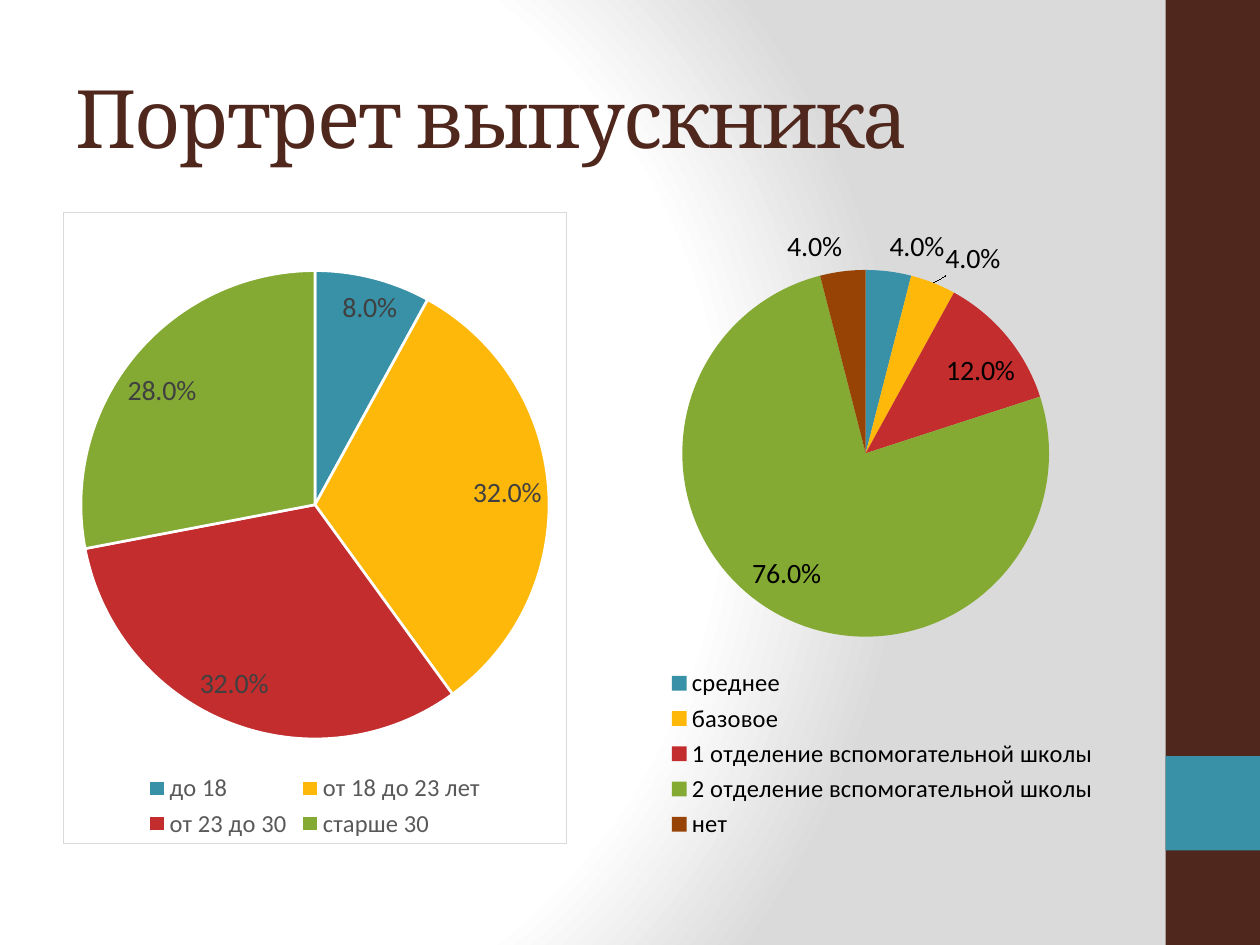
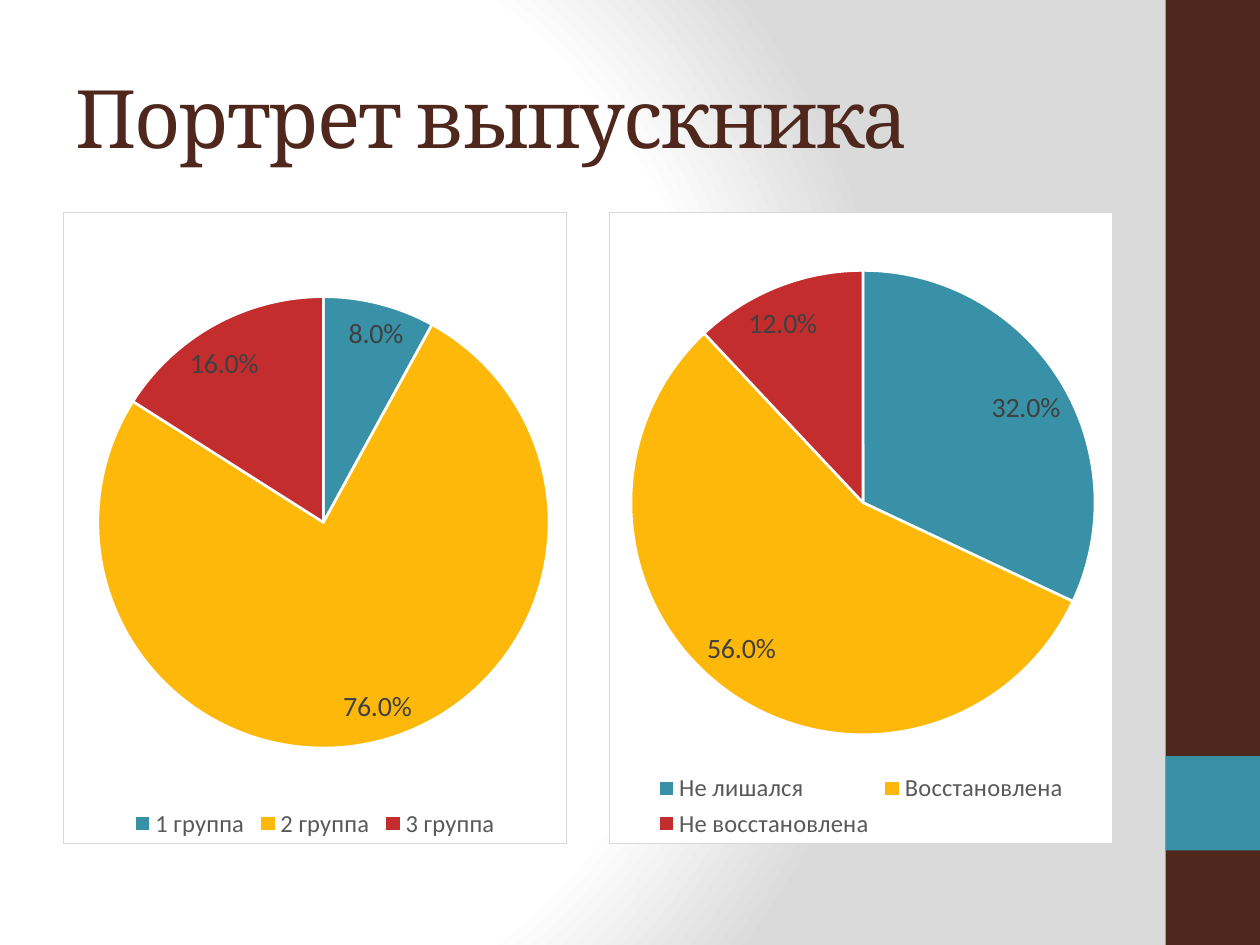
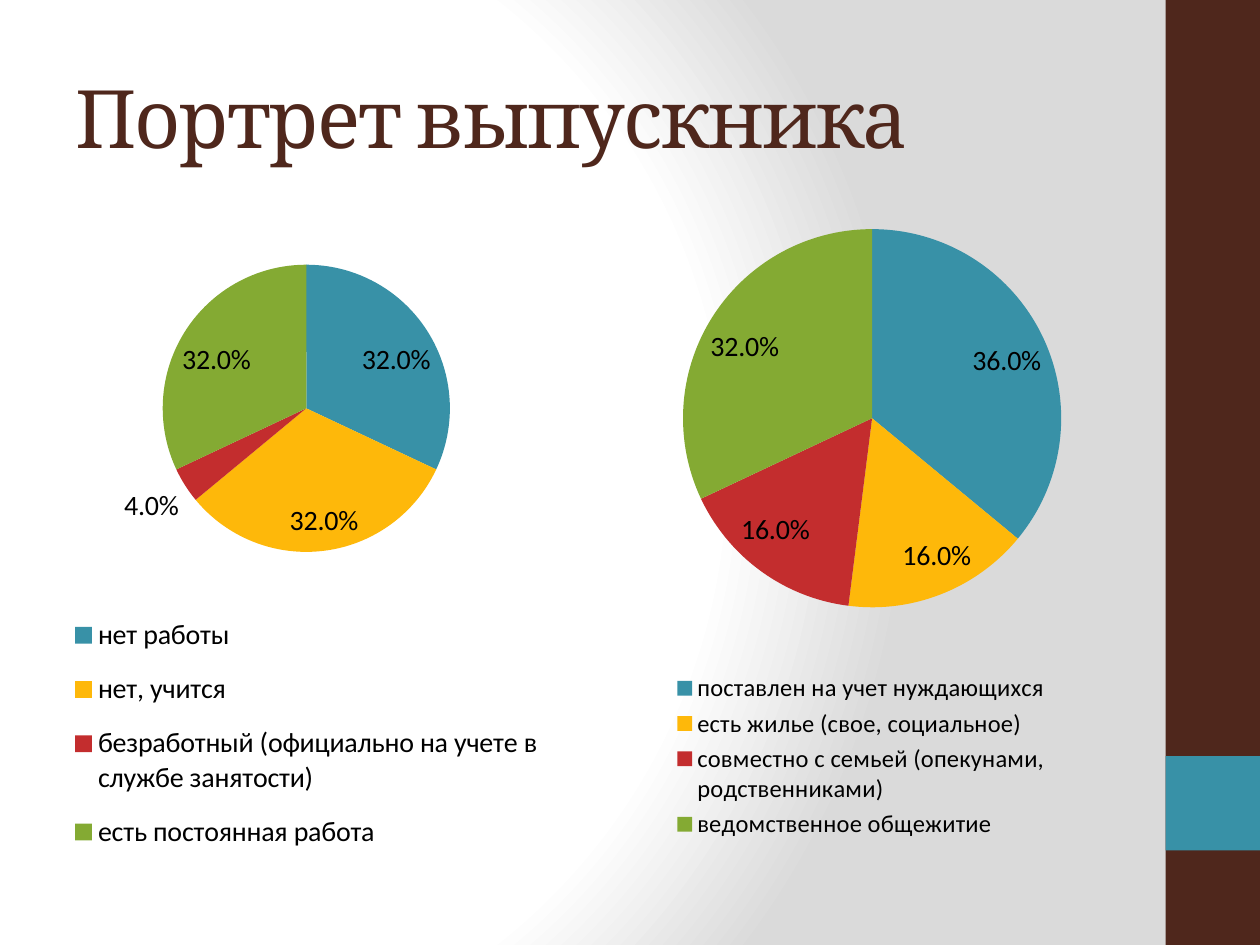
from pptx import Presentation
from pptx.chart.data import CategoryChartData
from pptx.dml.color import RGBColor
from pptx.enum.chart import XL_CHART_TYPE, XL_LABEL_POSITION, XL_LEGEND_POSITION
from pptx.enum.shapes import MSO_SHAPE
from pptx.enum.text import MSO_ANCHOR
from pptx.oxml import parse_xml
from pptx.oxml.ns import nsdecls, qn
from pptx.util import Pt

PIE = XL_CHART_TYPE.PIE
BEST_FIT = XL_LABEL_POSITION.BEST_FIT
BOTTOM = XL_LEGEND_POSITION.BOTTOM
RECTANGLE = MSO_SHAPE.RECTANGLE
MIDDLE = MSO_ANCHOR.MIDDLE

BROWN = RGBColor(0x4F, 0x27, 0x1C)
TEAL = RGBColor(0x38, 0x91, 0xA7)
YELLOW = RGBColor(0xFE, 0xB8, 0x0A)
RED = RGBColor(0xC3, 0x2D, 0x2E)
GREEN = RGBColor(0x84, 0xAA, 0x33)
RUST = RGBColor(0x96, 0x43, 0x05)
WHITE = RGBColor(0xFF, 0xFF, 0xFF)
BLACK = RGBColor(0x00, 0x00, 0x00)
SILVER = RGBColor(0xDA, 0xDA, 0xDA)
FRAME_GRAY = RGBColor(0xD9, 0xD9, 0xD9)
LABEL_GRAY = RGBColor(0x40, 0x40, 0x40)
LEGEND_GRAY = RGBColor(0x59, 0x59, 0x59)
SLICE_COLORS = [TEAL, YELLOW, RED, GREEN, RUST]

HEADING_FONT = "Cambria"
BODY_FONT = "Calibri"
WIDTH, HEIGHT = 720, 540
BAND_WIDTH = 54
TITLE_BOX = (36, 21.6, 600, 90)
LEFT_BOX = (36, 121, 288, 361.5)
RIGHT_BOX = (348, 121, 288, 361.5)
WIDE_RIGHT_BOX = (348, 121, 312.5, 361.5)
TALL_LEFT_BOX = (20, 121, 304, 387.5)

SLIDES = [
    [
        dict(box=LEFT_BOX, framed=True, shares={
            "до 18": 0.08, "от 18 до 23 лет": 0.32,
            "от 23 до 30": 0.32, "старше 30": 0.28}),
        dict(box=WIDE_RIGHT_BOX, shares={
            "среднее": 0.04, "базовое": 0.04,
            "1 отделение вспомогательной школы": 0.12,
            "2 отделение вспомогательной школы": 0.76, "нет": 0.04}),
    ],
    [
        dict(box=LEFT_BOX, framed=True, shares={
            "1 группа": 0.08, "2 группа": 0.76, "3 группа": 0.16}),
        dict(box=RIGHT_BOX, framed=True, shares={
            "Не лишался": 0.32, "Восстановлена": 0.56, "Не восстановлена": 0.12}),
    ],
    [
        dict(box=TALL_LEFT_BOX, legend_size=16, plot_area=(0.24, 0.02, 0.54, 0.54),
             legend_area=(0.05, 0.57, 0.92, 0.4), shares={
            "нет работы": 0.32, "нет, учится": 0.32,
            "безработный (официально на учете в службе занятости)": 0.04,
            "есть постоянная работа": 0.32}),
        dict(box=RIGHT_BOX, shares={
            "поставлен на учет нуждающихся": 0.36,
            "есть жилье (свое, социальное)": 0.16,
            "совместно с семьей (опекунами, родственниками)": 0.16,
            "ведомственное общежитие": 0.32}),
    ],
]


def points(box):
    return [Pt(length) for length in box]


def set_font(font, size, color, name=BODY_FONT):
    font.size = Pt(size)
    font.name = name
    font.color.rgb = color


def paint_background(master):
    master.background.fill.background()
    properties = master.element.find(".//" + qn("p:bgPr"))
    stops = "".join(
        f'<a:gs pos="{position}"><a:srgbClr val="{color}"/></a:gs>'
        for position, color in [(0, WHITE), (75000, WHITE), (100000, SILVER)])
    properties.replace(properties[0], parse_xml(
        f'<a:gradFill {nsdecls("a")} rotWithShape="1"><a:gsLst>{stops}</a:gsLst>'
        '<a:path path="circle"><a:fillToRect l="20000" t="50000" r="100000" b="50000"/>'
        '</a:path></a:gradFill>'))


def add_text(slide, text, box, size, color, font, spacing=0):
    frame = slide.shapes.add_textbox(*points(box)).text_frame
    frame.word_wrap = True
    frame.vertical_anchor = MIDDLE
    run = frame.paragraphs[0].add_run()
    run.text = text
    set_font(run.font, size, color, font)
    run.font._element.set("spc", str(spacing * 100))


def add_side_band(slide, box):
    left, top, width, height = box
    accent = (left, top + height * 0.8, width, width)
    for area, color in [(box, BROWN), (accent, TEAL)]:
        band = slide.shapes.add_shape(RECTANGLE, *points(area))
        band.shadow.inherit = False
        band.fill.solid()
        band.fill.fore_color.rgb = color
        band.line.fill.background()


def frame_chart(chart):
    chart.element.find(qn("c:chart")).addnext(parse_xml(
        f'<c:spPr {nsdecls("c", "a")}>'
        f'<a:solidFill><a:srgbClr val="{WHITE}"/></a:solidFill>'
        f'<a:ln w="{Pt(0.75)}"><a:solidFill><a:srgbClr val="{FRAME_GRAY}"/></a:solidFill></a:ln>'
        '</c:spPr>'))


def manual_layout(area, target=""):
    sides = "".join(f'<c:{side} val="{share}"/>' for side, share in zip("xywh", area))
    return parse_xml(
        f'<c:layout {nsdecls("c")}><c:manualLayout>{target}'
        f'<c:xMode val="edge"/><c:yMode val="edge"/>{sides}</c:manualLayout></c:layout>')


def place_plot(chart, area):
    plot = chart.element.find(".//" + qn("c:plotArea"))
    for automatic in plot.findall(qn("c:layout")):
        plot.remove(automatic)
    plot.insert(0, manual_layout(area, '<c:layoutTarget val="inner"/>'))


def place_legend(chart, area):
    legend = chart.element.find(".//" + qn("c:legend"))
    for automatic in legend.findall(qn("c:layout")):
        legend.remove(automatic)
    legend.find(qn("c:legendPos")).addnext(manual_layout(area))


def add_pie(slide, box, shares, framed=False, legend_size=14, plot_area=None, legend_area=None):
    data = CategoryChartData(number_format="0.0%")
    data.categories = list(shares)
    data.add_series("Series 1", list(shares.values()))
    chart = slide.shapes.add_chart(PIE, *points(box), data).chart
    set_font(chart.font, 10, BLACK)
    chart.has_title = False

    chart.has_legend = True
    chart.legend.position = BOTTOM
    chart.legend.include_in_layout = False
    set_font(chart.legend.font, legend_size, LEGEND_GRAY if framed else BLACK)

    pie = chart.plots[0]
    pie.vary_by_categories = True
    for index, color in zip(range(len(shares)), SLICE_COLORS):
        slice_format = pie.series[0].points[index].format
        slice_format.fill.solid()
        slice_format.fill.fore_color.rgb = color
        if framed:
            slice_format.line.color.rgb = WHITE
            slice_format.line.width = Pt(1.5)
        else:
            slice_format.line.fill.background()

    pie.has_data_labels = True
    labels = pie.data_labels
    labels.show_value = True
    labels.show_percentage = False
    labels.number_format = "0.0%"
    labels.number_format_is_linked = False
    labels.position = BEST_FIT
    set_font(labels.font, 16, LABEL_GRAY if framed else BLACK)

    if framed:
        frame_chart(chart)
    if plot_area:
        place_plot(chart, plot_area)
    if legend_area:
        place_legend(chart, legend_area)


def add_portrait_slide(prs, pies):
    slide = prs.slides.add_slide(prs.slide_layouts[6])
    add_side_band(slide, (WIDTH - BAND_WIDTH, 0, BAND_WIDTH, HEIGHT))
    add_text(slide, "Портрет выпускника", TITLE_BOX, size=46, color=BROWN,
             font=HEADING_FONT, spacing=-1)
    for pie in pies:
        add_pie(slide, **pie)


def main():
    prs = Presentation()
    prs.slide_width, prs.slide_height = Pt(WIDTH), Pt(HEIGHT)
    paint_background(prs.slide_master)
    for pies in SLIDES:
        add_portrait_slide(prs, pies)
    prs.save("out.pptx")


if __name__ == "__main__":
    main()
